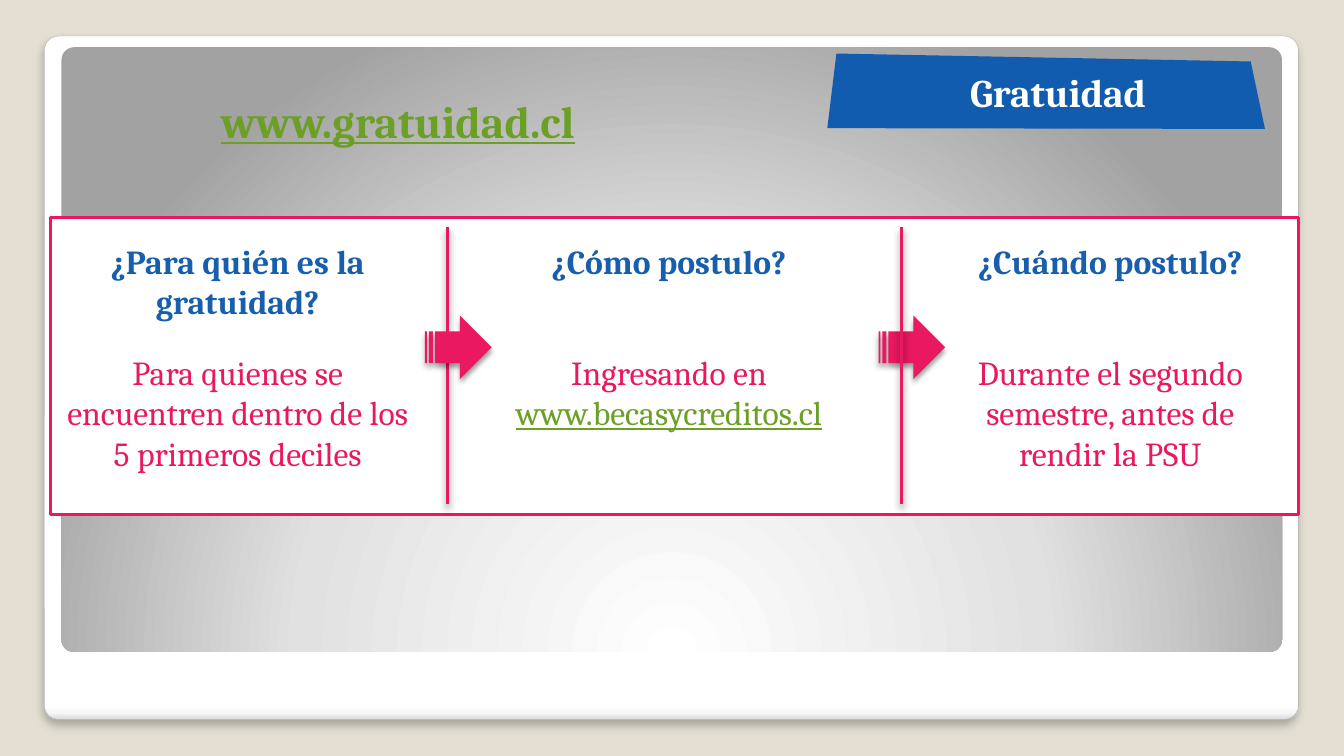
"""Build the slide that explains free tuition in three steps."""
from lxml.etree import SubElement
from pptx import Presentation
from pptx.dml.color import RGBColor
from pptx.enum.shapes import MSO_CONNECTOR as LINK, MSO_SHAPE as KIND
from pptx.enum.text import PP_ALIGN as ALIGN
from pptx.oxml import parse_xml
from pptx.oxml.ns import nsdecls, qn
from pptx.util import Cm, Pt

WHITE = RGBColor(0xFF, 0xFF, 0xFF)
SAND = RGBColor(0xE3, 0xDE, 0xD1)
GRAY = RGBColor(0xA4, 0xA4, 0xA4)
BLUE = RGBColor(0x12, 0x5C, 0xAF)
NAVY = RGBColor(0x17, 0x5E, 0xAD)
PINK = RGBColor(0xE9, 0x18, 0x60)
GREEN = RGBColor(0x6B, 0x9F, 0x25)

BASE = {"name": "Cambria", "size": Pt(24)}
HEAD = BASE | {"bold": True, "color": NAVY}
BODY = BASE | {"color": PINK}
URL = {"color": GREEN, "underline": True}

TITLE = [("Gratuidad", HEAD | {"size": Pt(28), "color": WHITE})]
SITE = [("www.gratuidad.cl", HEAD | URL | {"size": Pt(32)})]
STEPS = [
    (5.99, 7.82, 9.12, "¿Para quién es la gratuidad?",
     [("Para quienes se encuentren dentro de los 5 primeros deciles", BODY)]),
    (16.86, 8.61, 11.58, "¿Cómo postulo?",
     [("Ingresando en ", BODY), ("www.becasycreditos.cl", BODY | URL)]),
    (27.98, 8.61, 9.09, "¿Cuándo postulo?",
     [("Durante el segundo semestre, antes de rendir la PSU", BODY)]),
]
BANNER = [(21.08, 1.35), (31.52, 1.55), (31.88, 3.25), (20.85, 3.23)]
CARD = [(0, "FFFFFF"), (98, "FFFFFF"), (99, "F7F7F7"), (100, "DADADA")]
PANEL = [(0, "FFFFFF"), (55, "E1E1E1"), (100, "A2A2A2")]
DOWN = '<a:lin ang="5400000" scaled="0"/>'
ROUND = ('<a:path path="circle"><a:fillToRect l="50000" t="175000" '
         'r="50000" b="-75000"/></a:path>')
RULES = [11.28, 22.71]

deck = Presentation()
deck.slide_width, deck.slide_height = Cm(33.87), Cm(19.05)
slide = deck.slides.add_slide(deck.slide_layouts[6])
slide.background.fill.solid()
slide.background.fill.fore_color.rgb = SAND
shapes = slide.shapes


def style(item, fill=None, line=None, width=2.25):
    if fill is None:
        item.fill.background()
    else:
        item.fill.solid()
        item.fill.fore_color.rgb = fill
    if line is None:
        item.line.fill.background()
    else:
        item.line.color.rgb = line
        item.line.width = Pt(width)
    item.shadow.inherit = False
    return item


def shape(kind, box, **look):
    return style(shapes.add_shape(kind, *map(Cm, box)), **look)


def shade(item, alpha, blur, dist):
    props = item._element.spPr
    node = props.find(qn("a:effectLst"))
    if node is None:
        node = SubElement(props, qn("a:effectLst"))
    node.append(parse_xml(
        f'<a:outerShdw {nsdecls("a")} blurRad="{Pt(blur)}" dist="{Pt(dist)}" '
        f'dir="5400000" rotWithShape="0"><a:srgbClr val="000000">'
        f'<a:alpha val="{alpha * 1000}"/></a:srgbClr></a:outerShdw>'))


def plate(box, stops, tail, **look):
    item = shape(KIND.ROUNDED_RECTANGLE, box, **look)
    item.adjustments[0] = 0.021
    marks = "".join(f'<a:gs pos="{pos * 1000}"><a:srgbClr val="{tone}"/></a:gs>'
                    for pos, tone in stops)
    props = item._element.spPr
    props.replace(props.find(qn("a:noFill")), parse_xml(
        f'<a:gradFill {nsdecls("a")} rotWithShape="1">'
        f'<a:gsLst>{marks}</a:gsLst>{tail}</a:gradFill>'))
    return item


def text(box, runs, align=ALIGN.CENTER):
    frame = shapes.add_textbox(*map(Cm, box)).text_frame
    frame.word_wrap = True
    para = frame.paragraphs[0]
    para.alignment = align
    for words, look in runs:
        run = para.add_run()
        run.text = words
        for key, value in look.items():
            if key == "color":
                run.font.color.rgb = value
            else:
                setattr(run.font, key, value)


def rule(x):
    item = shapes.add_connector(LINK.STRAIGHT, Cm(x), Cm(5.72), Cm(x), Cm(12.7))
    item.line.color.rgb = PINK
    item.line.width = Pt(2.25)
    shade(item, 40, 5.2, 3)


def arrow(x):
    box = (x - 0.57, 7.95, 1.68, 1.6)
    shade(shape(KIND.STRIPED_RIGHT_ARROW, box, fill=PINK), 40, 4, 3)


shade(plate((1.12, 0.91, 31.6, 17.22), CARD, DOWN, line=GRAY, width=0.16),
      25, 6, 4)
plate((1.55, 1.19, 30.76, 15.24), PANEL, ROUND)

start, *rest = [(Cm(x), Cm(y)) for x, y in BANNER]
pen = shapes.build_freeform(*start)
pen.add_line_segments(rest, close=True)
style(pen.convert_to_shape(), fill=BLUE)
text((21.92, 1.6, 7.21, 1.45), TITLE, ALIGN.RIGHT)
text((0.4, 2.24, 19.25, 1.63), SITE)

shape(KIND.RECTANGLE, (1.27, 5.49, 31.45, 7.47), fill=WHITE, line=PINK)
for mid, wide, span, ask, reply in STEPS:
    text((mid - wide / 2, 5.94, wide, 2.31), [(ask, HEAD)])
    text((mid - span / 2, 8.74, span, 3.33), reply)

left, right = RULES
for draw, x in [(rule, left), (arrow, left), (arrow, right), (rule, right)]:
    draw(x)

deck.save("out.pptx")
